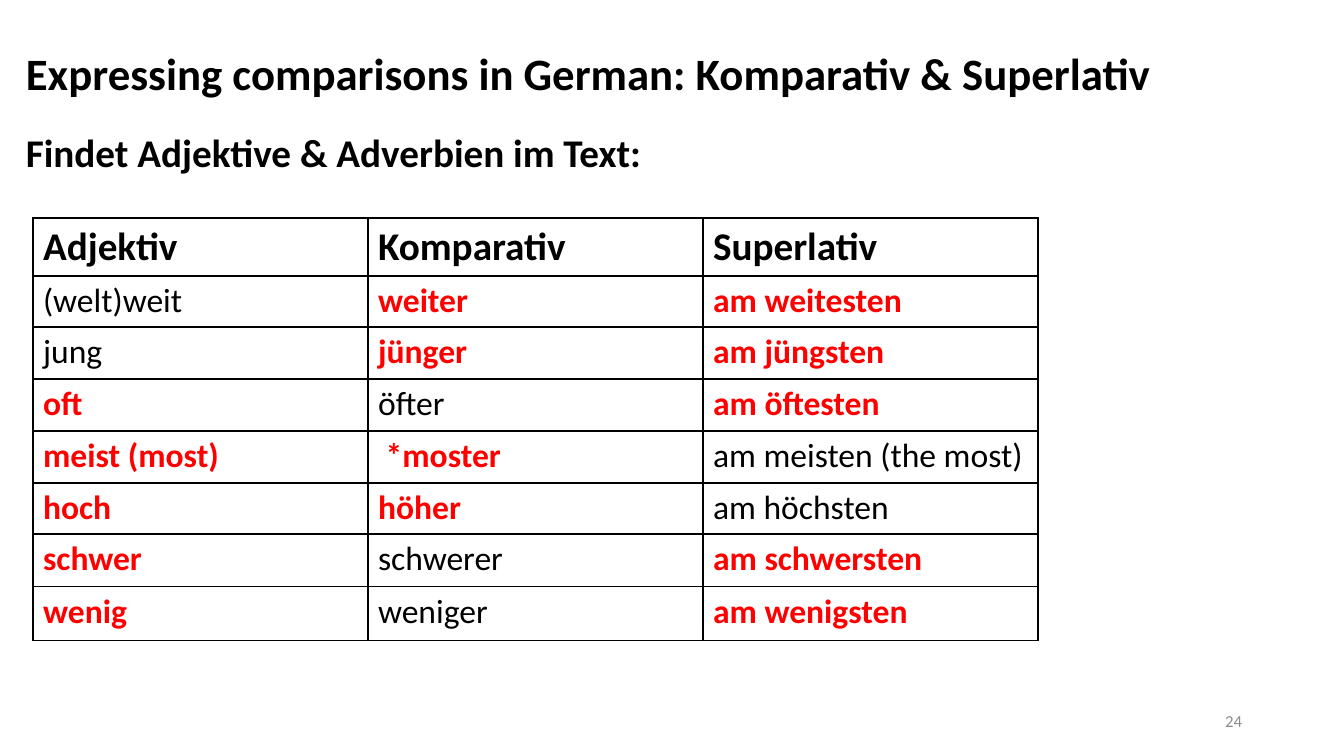
import pptx
import pptx.util
import pptx.dml.color
import pptx.enum.text
import pptx.oxml.ns
import lxml.etree

COLORS = {"text": "000000", "answer": "FF0000", "number": "8C8C8C", "paper": "FFFFFF"}
FONT = "Calibri"
EMU_PER_PX = 914400 / 100.8

HEADINGS = ("Adjektiv", "Komparativ", "Superlativ")
WORDS = [
    (("(welt)weit", "weiter", "am weitesten"), "Adjektiv"),
    (("jung", "jünger", "am jüngsten"), "Adjektiv"),
    (("oft", "öfter", "am öftesten"), "Komparativ"),
    (("meist (most)", " *moster", "am meisten (the most)"), "Superlativ"),
    (("hoch", "höher", "am höchsten"), "Superlativ"),
    (("schwer", "schwerer", "am schwersten"), "Komparativ"),
    (("wenig", "weniger", "am wenigsten"), "Komparativ"),
]
ROW_HEIGHTS = (58, 51, 52, 52, 52, 51, 53, 54)
COLUMN_WIDTH = 335
TABLE_LEFT, TABLE_TOP = 33, 218

ANCHOR = pptx.enum.text.MSO_ANCHOR
ALIGN = pptx.enum.text.PP_ALIGN
CAPTIONS = [
    ("Expressing comparisons in German: Komparativ & Superlativ", (16, 24, 1158, 105),
     ANCHOR.MIDDLE, {"line_spacing": 0.9}, (32, True, "text")),
    ("Findet Adjektive & Adverbien im Text:", (16, 129, 1303, 609),
     ANCHOR.TOP, {"line_spacing": 0.9, "space_before": pptx.util.Pt(10)}, (28, True, "text")),
    ("24", (950, 701, 302, 40),
     ANCHOR.MIDDLE, {"alignment": ALIGN.RIGHT}, (12, False, "number")),
]


def px(length):
    return pptx.util.Emu(round(length * EMU_PER_PX))


def rgb(name):
    return pptx.dml.color.RGBColor.from_string(COLORS[name])


def write(frame, wording, size, bold, color):
    paragraph = frame.paragraphs[0]
    run = paragraph.add_run()
    run.text = wording
    look = {"name": FONT, "size": pptx.util.Pt(size), "bold": bold}
    for key, value in look.items():
        setattr(run.font, key, value)
    run.font.color.rgb = rgb(color)
    return paragraph


def add_caption(slide, wording, box, anchor, layout, style):
    frame = slide.shapes.add_textbox(*map(px, box)).text_frame
    frame.word_wrap = True
    frame.vertical_anchor = anchor
    paragraph = write(frame, wording, *style)
    for key, value in layout.items():
        setattr(paragraph, key, value)


def fill_cell(cell, wording, style):
    write(cell.text_frame, wording, *style)
    properties = cell._tc.get_or_add_tcPr()
    qn = pptx.oxml.ns.qn
    for side in ("lnL", "lnR", "lnT", "lnB"):
        border = lxml.etree.SubElement(properties, qn(f"a:{side}"), w="12700")
        solid = lxml.etree.SubElement(border, qn("a:solidFill"))
        lxml.etree.SubElement(solid, qn("a:srgbClr"), val=COLORS["text"])
    cell.fill.solid()
    cell.fill.fore_color.rgb = rgb("paper")


def add_word_table(slide):
    table = slide.shapes.add_table(
        len(ROW_HEIGHTS), len(HEADINGS), px(TABLE_LEFT), px(TABLE_TOP),
        px(COLUMN_WIDTH * len(HEADINGS)), px(sum(ROW_HEIGHTS))).table
    for column in table.columns:
        column.width = px(COLUMN_WIDTH)
    for row, height in zip(table.rows, ROW_HEIGHTS):
        row.height = px(height)
    for index, heading in enumerate(HEADINGS):
        fill_cell(table.cell(0, index), heading, (28, True, "text"))
    for row, (forms, given) in enumerate(WORDS, 1):
        for index, (form, heading) in enumerate(zip(forms, HEADINGS)):
            style = (24, False, "text") if heading == given else (24, True, "answer")
            fill_cell(table.cell(row, index), form, style)


def main():
    deck = pptx.Presentation()
    deck.slide_width, deck.slide_height = px(1344), px(756)
    slide = deck.slides.add_slide(deck.slide_layouts[6])
    for caption in CAPTIONS:
        add_caption(slide, *caption)
    add_word_table(slide)
    deck.save("out.pptx")


if __name__ == "__main__":
    main()
